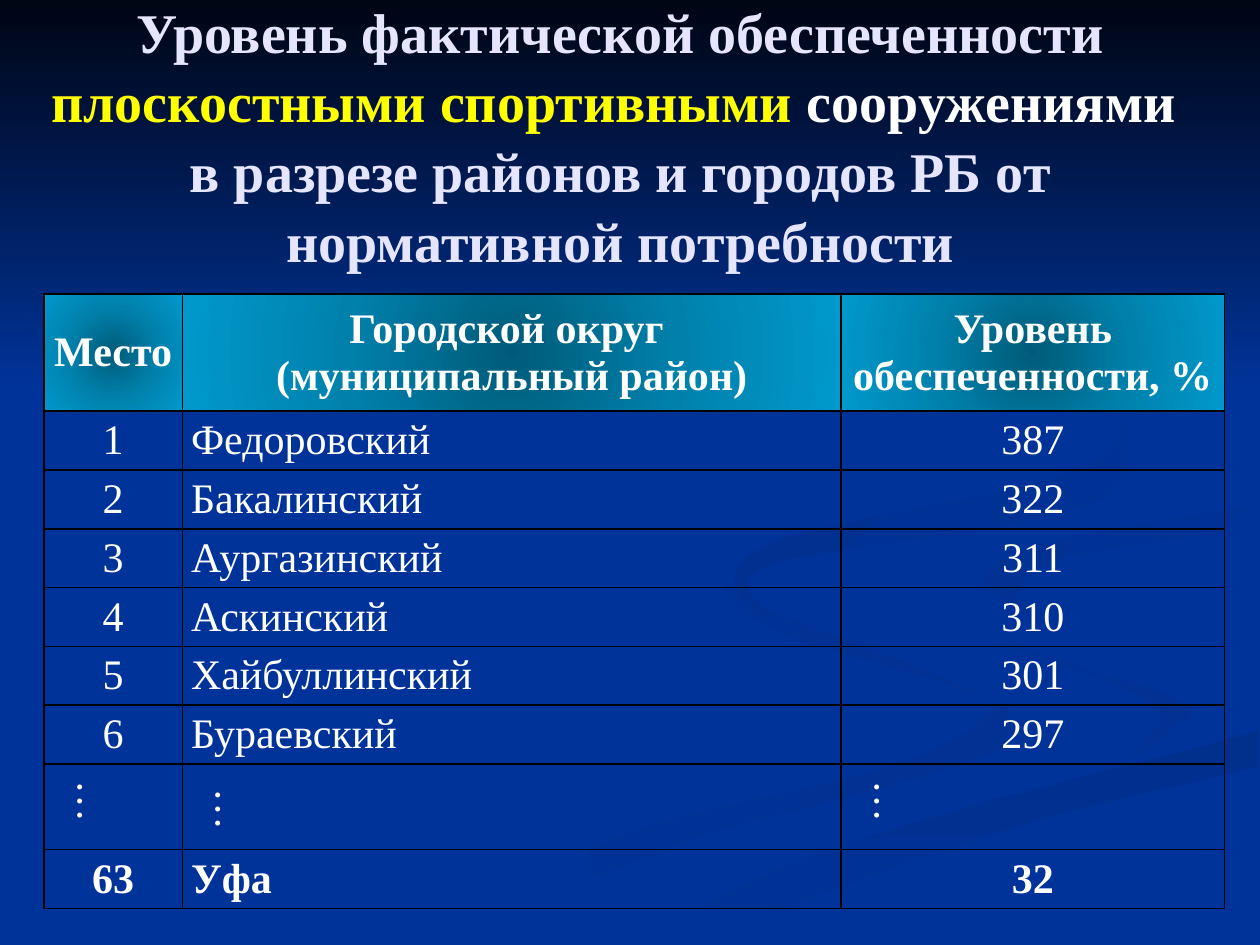
from dataclasses import dataclass

from lxml import etree
from pptx import Presentation
from pptx.dml.color import RGBColor
from pptx.enum.shapes import MSO_SHAPE
from pptx.enum.text import MSO_ANCHOR, PP_ALIGN
from pptx.oxml.ns import qn
from pptx.util import Pt

LEFT, CENTER = PP_ALIGN.LEFT, PP_ALIGN.CENTER
MIDDLE = MSO_ANCHOR.MIDDLE
RECT = MSO_SHAPE.RECTANGLE


@dataclass(frozen=True)
class Theme:
    font: str = "Times New Roman"
    head: int = 32
    body: int = 24
    back: str = "003399"
    night: str = "000514"
    soft: str = "003193"
    deep: str = "002F8C"
    pale: str = "E5E5FF"
    white: str = "FFFFFF"
    accent: str = "FFFF00"
    border: str = "000000"
    glow: tuple = ("005B79", "0081AC", "0099CC")


THEME = Theme()

# Ribbons: gradient colours, angle, and the two edges as curve points
RIBBONS = [
    (THEME.back, THEME.soft, 0,
     [(413, 331), (434, 346), (556, 395), (564, 410), (499, 441), (359, 476), (216, 539)],
     [(260, 539), (383, 484), (519, 446), (567, 430), (576, 418), (562, 398), (445, 361),
      (414, 338)]),
    (THEME.back, THEME.soft, 45,
     [(521, 334), (534, 355), (598, 378), (661, 404), (644, 436)],
     [(679, 410), (670, 398), (583, 370), (528, 348)]),
    (THEME.deep, THEME.back, 90,
     [(362, 539), (442, 498), (541, 465), (719, 418)],
     [(719, 438), (591, 469), (467, 511), (411, 539)]),
    (THEME.deep, THEME.back, 45,
     [(549, 168), (609, 201), (640, 241), (606, 272), (450, 307), (420, 334), (448, 360)],
     [(427, 338), (449, 320), (619, 289), (643, 248), (622, 210)]),
    (THEME.soft, THEME.back, 45,
     [(595, 357), (562, 331), (601, 310), (719, 289)],
     [(719, 302), (607, 319), (580, 340)]),
]

TITLE = [
    ("Уровень фактической обеспеченности ", THEME.pale),
    ("плоскостными спортивными ", THEME.accent),
    ("сооружениями ", THEME.white),
    ("в разрезе районов и городов РБ от нормативной потребности", THEME.pale),
]

WIDTHS = [79, 376.5, 219]
HEIGHTS = [67] + [33.6] * 6 + [49, 33.6]
ROWS = [
    ("Место", "Городской округ \n(муниципальный район)", "Уровень обеспеченности, %"),
    ("1", "Федоровский", "387"),
    ("2", "Бакалинский", "322"),
    ("3", "Аургазинский", "311"),
    ("4", "Аскинский", "310"),
    ("5", "Хайбуллинский", "301"),
    ("6", "Бураевский", "297"),
    ("…", "…", "…"),
    ("63", "Уфа", "32"),
]


def rgb(code):
    return RGBColor.from_string(code)


def style(font, size, color, bold):
    font.name, font.size, font.bold = THEME.font, Pt(size), bold
    font.color.rgb = rgb(color)


def blend(props, colors, angle=None):
    """Swap the solid fill for a gradient: linear, or radial with no angle."""
    grad = etree.Element(qn("a:gradFill"), rotWithShape="1")
    items = etree.SubElement(grad, qn("a:gsLst"))
    for i, color in enumerate(colors):
        place = 100000 * i // (len(colors) - 1)
        stop = etree.SubElement(items, qn("a:gs"), pos=str(place))
        etree.SubElement(stop, qn("a:srgbClr"), val=color)
    if angle is None:
        path = etree.SubElement(grad, qn("a:path"), path="circle")
        etree.SubElement(path, qn("a:fillToRect"), dict.fromkeys("ltrb", "50000"))
    else:
        etree.SubElement(grad, qn("a:lin"), ang=str(angle * 60000), scaled="1")
    props.replace(props.find(qn("a:solidFill")), grad)


def frame(props):
    """Put a thin border on each side of a cell."""
    for i, side in enumerate(("lnL", "lnR", "lnT", "lnB")):
        line = etree.Element(qn("a:" + side), w=str(Pt(1)))
        fill = etree.SubElement(line, qn("a:solidFill"))
        etree.SubElement(fill, qn("a:srgbClr"), val=THEME.border)
        props.insert(i, line)


def curve(points, steps=6):
    """Round an edge with a Catmull-Rom spline through its points."""
    ends = [points[0], *points, points[-1]]
    out = []
    for a, b, c, d in zip(ends, ends[1:], ends[2:], ends[3:]):
        for k in range(steps):
            t = k / steps
            out.append(tuple(
                q + t * (r - p + t * (2 * p - 5 * q + 4 * r - s
                                      + t * (3 * (q - r) + s - p))) / 2
                for p, q, r, s in zip(a, b, c, d)))
    return out + [points[-1]]


def paint(shape, start, end, angle):
    shape.shadow.inherit = False
    shape.line.fill.background()
    shape.fill.solid()
    shape.fill.fore_color.rgb = rgb(start)
    blend(shape._element.spPr, (start, end), angle)


def add_ribbon(slide, start, end, angle, near, far):
    points = curve(near) + curve(far)
    pen = slide.shapes.build_freeform(*points[0], scale=Pt(1))
    pen.add_line_segments(points[1:], close=True)
    paint(pen.convert_to_shape(), start, end, angle)


def add_sky(slide):
    sky = slide.shapes.add_shape(RECT, 0, 0, Pt(720), Pt(222))
    paint(sky, THEME.night, THEME.back, 90)


def set_title(slide):
    title = slide.shapes.title
    title.left, title.top = Pt(14.4), Pt(31.7)
    title.width, title.height = Pt(680.4), Pt(90)
    box = title.text_frame
    box.word_wrap, box.vertical_anchor = True, MIDDLE
    para = box.paragraphs[0]
    para.alignment, para.line_spacing = CENTER, 1.04
    for i, (text, color) in enumerate(TITLE):
        if i == len(TITLE) - 1:
            para.add_line_break()
        run = para.add_run()
        run.text = text
        style(run.font, THEME.head, color, True)
    # Bring the title in front of the background
    slide.shapes._spTree.append(title._element)


def set_cell(cell, text, row, col):
    cell.text_frame.text = text
    cell.vertical_anchor = MIDDLE
    cell.margin_left = cell.margin_right = Pt(5)
    cell.margin_top = cell.margin_bottom = 0
    props = cell._tc.get_or_add_tcPr()
    for para in cell.text_frame.paragraphs:
        para.alignment = LEFT if col == 1 and row else CENTER
        if text == "…":
            props.set("vert", "vert270")
            para._p.get_or_add_pPr().set("marL", str(Pt(6)))
        for run in para.runs:
            style(run.font, THEME.body, THEME.white, row in (0, len(ROWS) - 1))
    if row:
        cell.fill.background()
    else:
        cell.fill.solid()
        blend(props, THEME.glow)
    frame(props)


def add_grid(slide):
    shape = slide.shapes.add_table(len(ROWS), len(WIDTHS), Pt(25.2), Pt(168),
                                   Pt(sum(WIDTHS)), Pt(sum(HEIGHTS)))
    table = shape.table
    table.first_row = table.horz_banding = False
    for col, width in zip(table.columns, WIDTHS):
        col.width = Pt(width)
    for i, (height, texts) in enumerate(zip(HEIGHTS, ROWS)):
        table.rows[i].height = Pt(height)
        for j, text in enumerate(texts):
            set_cell(table.cell(i, j), text, i, j)


def main():
    deck = Presentation()
    deck.slide_width, deck.slide_height = Pt(720), Pt(540)
    slide = deck.slides.add_slide(deck.slide_layouts[5])
    back = slide.background.fill
    back.solid()
    back.fore_color.rgb = rgb(THEME.back)
    for ribbon in RIBBONS:
        add_ribbon(slide, *ribbon)
    add_sky(slide)
    set_title(slide)
    add_grid(slide)
    deck.save("out.pptx")


if __name__ == "__main__":
    main()
